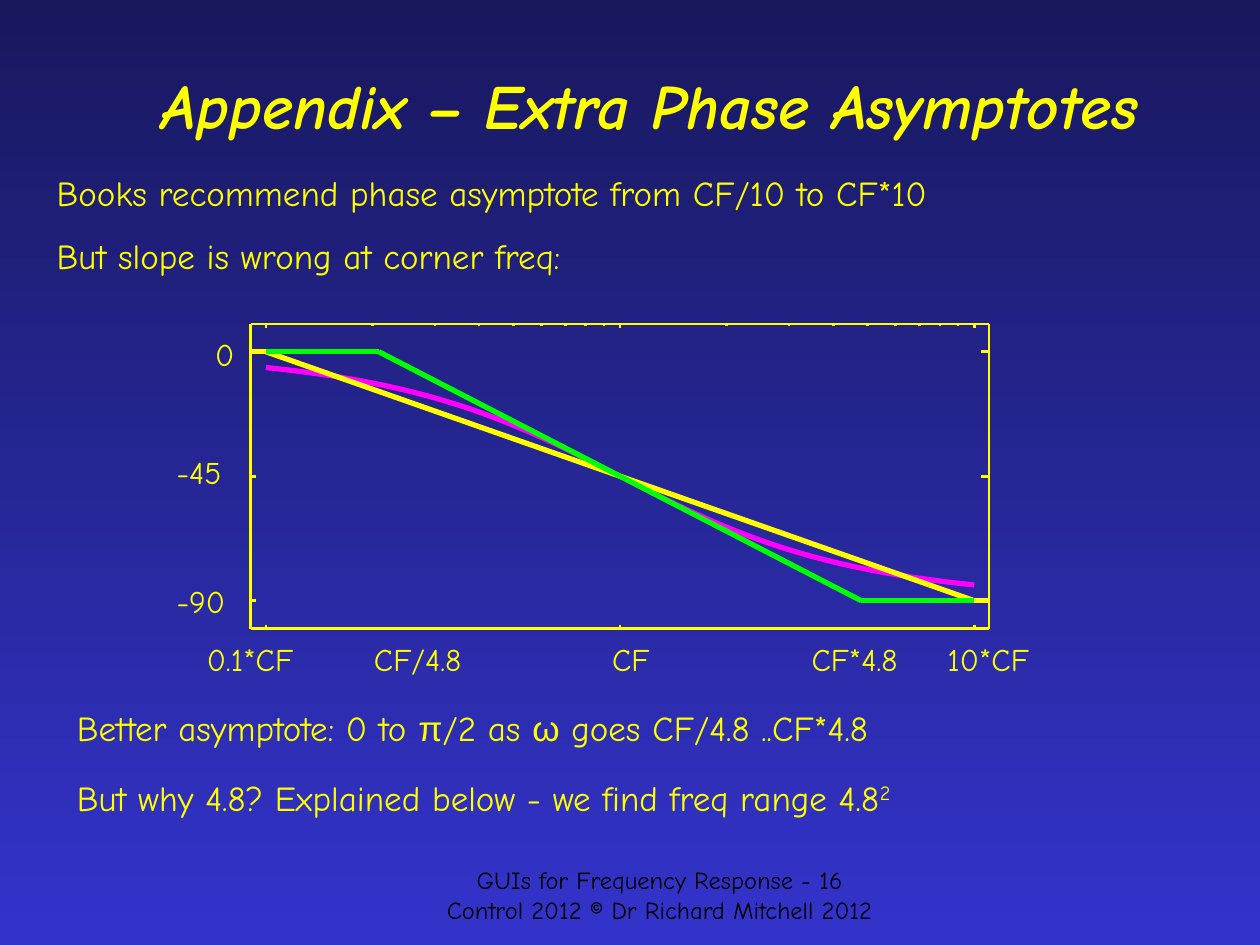
import math

from lxml import etree
from pptx import Presentation
from pptx.dml.color import RGBColor
from pptx.enum.shapes import MSO_CONNECTOR
from pptx.enum.text import MSO_ANCHOR, MSO_AUTO_SIZE, PP_ALIGN
from pptx.oxml.ns import qn
from pptx.util import Cm, Pt

STRAIGHT = MSO_CONNECTOR.STRAIGHT
MIDDLE = MSO_ANCHOR.MIDDLE
NO_FIT, FIT_SHAPE = MSO_AUTO_SIZE.NONE, MSO_AUTO_SIZE.SHAPE_TO_FIT_TEXT
LEFT, CENTER = PP_ALIGN.LEFT, PP_ALIGN.CENTER

COLORS = {
    "background_top": "18185E",
    "background_bottom": "3333CC",
    "yellow": "FFFF00",
    "magenta": "FF00FF",
    "green": "00FF00",
    "footer": "000000",
}
FONT = "Comic Neue"
GREEK = {"font": "Arial"}

# Plot frame and scales, in centimetres
FRAME_LEFT, FRAME_RIGHT, FRAME_TOP, FRAME_BOTTOM = 5.05, 19.94, 6.53, 12.67
CORNER_X, DECADE = 12.5, 7.14
ZERO_Y, QUARTER_TURN = 7.09, 5.02
BETTER_RATIO = 4.8

X_LABELS = [("0.1*CF", 4.17, 1.96), ("CF/4.8", 7.54, 2.06), ("CF", 12.34, 0.79),
            ("CF*4.8", 16.36, 2.06), ("10*CF", 19.1, 1.8)]
Y_LABELS = [("0", 4.34, 6.76, 0.38), ("-45", 3.56, 9.14, 1.04), ("-90", 3.56, 11.73, 1.04)]


def color(name):
    return RGBColor.from_string(COLORS[name])


def frequency_x(ratio):
    """Horizontal position of a frequency given as a multiple of the corner."""
    return CORNER_X + DECADE * math.log10(ratio)


def phase_y(degrees):
    return ZERO_Y - QUARTER_TURN * degrees / 90


def write_text(frame, paragraphs, size=20, fill="yellow", align=LEFT, bold=False,
               italic=False, spacing=0):
    """Each paragraph is a list of (text, options) runs; options are font and baseline."""
    for index, runs in enumerate(paragraphs):
        paragraph = frame.paragraphs[0] if index == 0 else frame.add_paragraph()
        properties = paragraph._p.get_or_add_pPr()
        properties.set("marL", "0")
        properties.set("indent", "0")
        etree.SubElement(properties, qn("a:buNone"))
        paragraph.alignment = align
        paragraph.space_before = Pt(spacing if index else 0)
        paragraph.space_after = Pt(spacing)
        for text, options in runs:
            run = paragraph.add_run()
            run.text = text
            run.font.name = options.get("font", FONT)
            run.font.size = Pt(size)
            run.font.bold = bold
            run.font.italic = italic
            run.font.color.rgb = color(fill)
            if "baseline" in options:
                run._r.get_or_add_rPr().set("baseline", options["baseline"])


def place(shape, left, top, width, height):
    shape.left, shape.top = Cm(left), Cm(top)
    shape.width, shape.height = Cm(width), Cm(height)


def add_text(slide, box, paragraphs, **text_format):
    shape = slide.shapes.add_textbox(*(Cm(length) for length in box))
    shape.text_frame.word_wrap = True
    write_text(shape.text_frame, paragraphs, **text_format)


def add_label(slide, text, left, top, width):
    shape = slide.shapes.add_textbox(Cm(left), Cm(top), Cm(width), Cm(0.76))
    frame = shape.text_frame
    frame.margin_left = frame.margin_right = frame.margin_top = frame.margin_bottom = 0
    frame.word_wrap = False
    frame.auto_size = FIT_SHAPE
    write_text(frame, [[(text, {})]], size=18)


def add_line(slide, start, end, stroke="yellow", width=1.5):
    points = (Cm(length) for length in (*start, *end))
    connector = slide.shapes.add_connector(STRAIGHT, *points)
    connector.line.color.rgb = color(stroke)
    connector.line.width = Pt(width)
    etree.SubElement(connector._element.spPr, qn("a:effectLst"))


def add_polyline(slide, points, stroke):
    for start, end in zip(points, points[1:]):
        add_line(slide, start, end, stroke, 3)


def add_frame(slide):
    corners = [(FRAME_LEFT, FRAME_TOP), (FRAME_RIGHT, FRAME_TOP),
               (FRAME_RIGHT, FRAME_BOTTOM), (FRAME_LEFT, FRAME_BOTTOM)]
    for start, end in zip(corners, corners[1:] + corners[:1]):
        add_line(slide, start, end)


def add_ticks(slide):
    minor = [step * decade for decade in (0.1, 1) for step in range(2, 10)]
    ticks = [(ratio, 0.04) for ratio in minor] + [(ratio, 0.08) for ratio in (0.1, 1, 10)]
    for ratio, length in ticks:
        x = frequency_x(ratio)
        add_line(slide, (x, FRAME_BOTTOM), (x, FRAME_BOTTOM - length))
        add_line(slide, (x, FRAME_TOP), (x, FRAME_TOP + length))
    for degrees in (0, -45, -90):
        y = phase_y(degrees)
        add_line(slide, (FRAME_LEFT, y), (FRAME_LEFT + 0.12, y))
        add_line(slide, (FRAME_RIGHT, y), (FRAME_RIGHT - 0.17, y))


def add_phase_curve(slide, segments=48):
    """True phase lag of a first-order system over two decades."""
    ratios = [10 ** (2 * step / segments - 1) for step in range(segments + 1)]
    points = [(Cm(frequency_x(ratio)), Cm(phase_y(-math.degrees(math.atan(ratio)))))
              for ratio in ratios]
    builder = slide.shapes.build_freeform(*points[0])
    builder.add_line_segments(points[1:], close=False)
    curve = builder.convert_to_shape()
    curve.shadow.inherit = False
    curve.fill.background()
    curve.line.color.rgb = color("magenta")
    curve.line.width = Pt(3)


def add_asymptote(slide, ratio, left, right, stroke):
    """Flat, sloping and flat again, with breaks at corner/ratio and corner*ratio."""
    top, bottom = phase_y(0), phase_y(-90)
    add_polyline(slide, [(left, top), (frequency_x(1 / ratio), top),
                         (frequency_x(ratio), bottom), (right, bottom)], stroke)


def add_plot(slide):
    add_frame(slide)
    add_ticks(slide)
    for text, left, width in X_LABELS:
        add_label(slide, text, left, 12.9, width)
    for label in Y_LABELS:
        add_label(slide, *label)
    add_phase_curve(slide)
    add_asymptote(slide, 10, FRAME_LEFT, FRAME_RIGHT, "yellow")
    add_asymptote(slide, BETTER_RATIO, frequency_x(0.1), frequency_x(10), "green")


def set_background(slide):
    fill = slide.background.fill
    fill.gradient()
    fill.gradient_angle = 270
    for stop, name in zip(fill.gradient_stops, ("background_top", "background_bottom")):
        stop.color.rgb = color(name)


def fill_placeholders(slide):
    title, body = slide.shapes.title, slide.placeholders[1]
    place(title, 1.5, 0.91, 23.22, 2.39)
    title.text_frame.vertical_anchor = MIDDLE
    title.text_frame.auto_size = NO_FIT
    write_text(title.text_frame, [[("Appendix – Extra Phase Asymptotes", {})]],
               size=36, align=CENTER, bold=True, italic=True)
    place(body, 0.89, 3.33, 23.22, 2.39)
    body.text_frame.auto_size = NO_FIT
    write_text(body.text_frame,
               [[("Books recommend phase asymptote from CF/10 to CF*10", {})],
                [("But slope is wrong at corner freq:", {})]], spacing=6)


def main():
    presentation = Presentation()
    presentation.slide_width, presentation.slide_height = Cm(25.4), Cm(19.05)
    slide = presentation.slides.add_slide(presentation.slide_layouts[1])
    set_background(slide)
    fill_placeholders(slide)
    add_plot(slide)
    add_text(slide, (1.3, 14.12, 22.4, 1.12),
             [[("Better asymptote: 0 to ", {}), ("π", GREEK), ("/2 as ", {}),
               ("ω", GREEK), (" goes CF/4.8 ..CF*4.8", {})]])
    add_text(slide, (1.3, 15.52, 22.6, 1.12),
             [[("But why 4.8? Explained below - we find freq range 4.8", {}),
               ("2", {"baseline": "30000"})]])
    add_text(slide, (6.3, 17.32, 14, 1.27),
             [[("GUIs for Frequency Response - 16", {})],
              [("Control 2012 © Dr Richard Mitchell 2012", {})]],
             size=14, fill="footer", align=CENTER)
    presentation.save("out.pptx")


if __name__ == "__main__":
    main()
